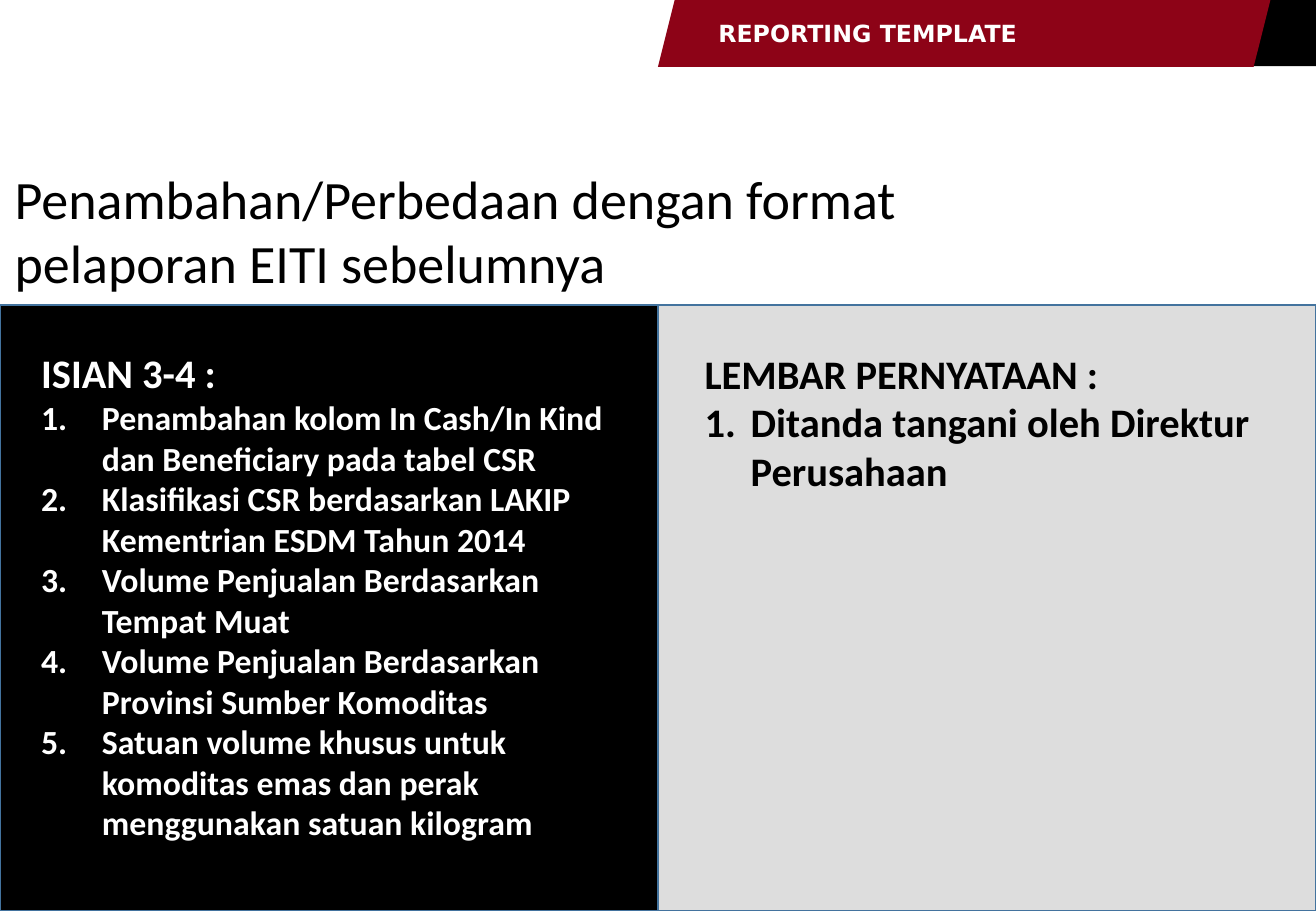
from dataclasses import dataclass

from lxml import etree
from pptx import Presentation
from pptx.dml.color import RGBColor
from pptx.enum.shapes import MSO_SHAPE
from pptx.enum.text import MSO_ANCHOR, MSO_AUTO_SIZE, PP_ALIGN
from pptx.oxml.ns import qn
from pptx.util import Inches, Pt

RECTANGLE = MSO_SHAPE.RECTANGLE
PARALLELOGRAM = MSO_SHAPE.PARALLELOGRAM
MANUAL_INPUT = MSO_SHAPE.FLOWCHART_MANUAL_INPUT
TOP, MIDDLE = MSO_ANCHOR.TOP, MSO_ANCHOR.MIDDLE
LEFT = PP_ALIGN.LEFT
NO_AUTOFIT = MSO_AUTO_SIZE.NONE
TITLE_ONLY = 5


@dataclass(frozen=True)
class Theme:
    black: RGBColor = RGBColor(0x00, 0x00, 0x00)
    white: RGBColor = RGBColor(0xFF, 0xFF, 0xFF)
    red: RGBColor = RGBColor(0x8D, 0x03, 0x17)
    grey: RGBColor = RGBColor(0xDD, 0xDD, 0xDD)
    border: RGBColor = RGBColor(0x43, 0x73, 0x9E)
    body_font: str = "Calibri"
    banner_font: str = "DejaVu Sans"
    title_size: int = 32
    heading_size: int = 24
    item_size: int = 20
    banner_size: int = 14


THEME = Theme()

SLIDE_WIDTH, SLIDE_HEIGHT = 10.83, 7.5
COLUMN_WIDTH = SLIDE_WIDTH / 2
PANEL_TOP = 2.51
TEXT_TOP = 2.82

TITLE = "Penambahan/Perbedaan dengan format pelaporan EITI sebelumnya"
FORM_ITEMS = [
    "Penambahan kolom In Cash/In Kind dan Beneficiary pada tabel CSR",
    "Klasifikasi CSR berdasarkan LAKIP Kementrian ESDM Tahun 2014",
    "Volume Penjualan Berdasarkan Tempat Muat",
    "Volume Penjualan Berdasarkan Provinsi Sumber Komoditas",
    "Satuan volume khusus untuk komoditas emas dan perak menggunakan satuan kilogram",
]
STATEMENT_ITEMS = ["Ditanda tangani oleh Direktur Perusahaan"]


def format_paragraph(paragraph, size, color, bold=True, font_name=THEME.body_font):
    paragraph.alignment = LEFT
    for run in paragraph.runs:
        run.font.name = font_name
        run.font.size = Pt(size)
        run.font.bold = bold
        run.font.color.rgb = color


def number_paragraph(paragraph, indent):
    properties = paragraph._p.get_or_add_pPr()
    properties.set("marL", str(Inches(indent)))
    properties.set("indent", str(-Inches(indent)))
    etree.SubElement(properties, qn("a:buFont"), typeface="+mj-lt")
    etree.SubElement(properties, qn("a:buAutoNum"), type="arabicPeriod")


def add_block(slide, kind, left, top, width, height, fill, border=None):
    shape = slide.shapes.add_shape(
        kind, Inches(left), Inches(top), Inches(width), Inches(height))
    shape.shadow.inherit = False
    shape.fill.solid()
    shape.fill.fore_color.rgb = fill
    if border is None:
        shape.line.fill.background()
    else:
        shape.line.color.rgb = border
        shape.line.width = Pt(1)
    return shape


def add_banner(slide):
    # Black corner, its slanted end tucked under the red banner
    corner = add_block(slide, MANUAL_INPUT, 10.1, -0.2, 0.55, 0.94, THEME.black)
    corner.rotation = 90
    corner._element.spPr.find(qn("a:xfrm")).set("flipV", "1")

    # Red banner with the section name
    banner = add_block(slide, PARALLELOGRAM, COLUMN_WIDTH, 0, 5.04, 0.55, THEME.red)
    frame = banner.text_frame
    frame.text = "REPORTING TEMPLATE"
    frame.vertical_anchor = MIDDLE
    frame.margin_left = frame.margin_right = Inches(0.02)
    format_paragraph(frame.paragraphs[0], THEME.banner_size, THEME.white,
                     font_name=THEME.banner_font)


def set_title(slide):
    title = slide.shapes.title
    title.left, title.top = Inches(0.02), Inches(1.31)
    title.width, title.height = Inches(7.96), Inches(1.18)
    frame = title.text_frame
    frame.text = TITLE
    frame.word_wrap = True
    frame.auto_size = NO_AUTOFIT
    frame.vertical_anchor = TOP
    format_paragraph(frame.paragraphs[0], THEME.title_size, THEME.black, bold=False)


def add_numbered_list(slide, left, width, height, heading, items, color, item_size, indent):
    box = slide.shapes.add_textbox(
        Inches(left), Inches(TEXT_TOP), Inches(width), Inches(height))
    frame = box.text_frame
    frame.word_wrap = True
    frame.text = heading
    format_paragraph(frame.paragraphs[0], THEME.heading_size, color)
    for item in items:
        paragraph = frame.add_paragraph()
        paragraph.text = item
        format_paragraph(paragraph, item_size, color)
        number_paragraph(paragraph, indent)


def main():
    presentation = Presentation()
    presentation.slide_width = Inches(SLIDE_WIDTH)
    presentation.slide_height = Inches(SLIDE_HEIGHT)
    slide = presentation.slides.add_slide(presentation.slide_layouts[TITLE_ONLY])

    # Header
    add_banner(slide)
    set_title(slide)

    # Two panels side by side
    for column, fill in enumerate((THEME.black, THEME.grey)):
        add_block(slide, RECTANGLE, column * COLUMN_WIDTH, PANEL_TOP, COLUMN_WIDTH,
                  SLIDE_HEIGHT - PANEL_TOP, fill, THEME.border)

    # Panel texts
    add_numbered_list(slide, 0.24, 4.98, 4.54, "ISIAN 3-4 :", FORM_ITEMS,
                      THEME.white, THEME.item_size, 0.5)
    add_numbered_list(slide, 5.7, 5.13, 1.31, "LEMBAR PERNYATAAN :", STATEMENT_ITEMS,
                      THEME.black, THEME.heading_size, 0.38)

    presentation.save("out.pptx")


if __name__ == "__main__":
    main()
